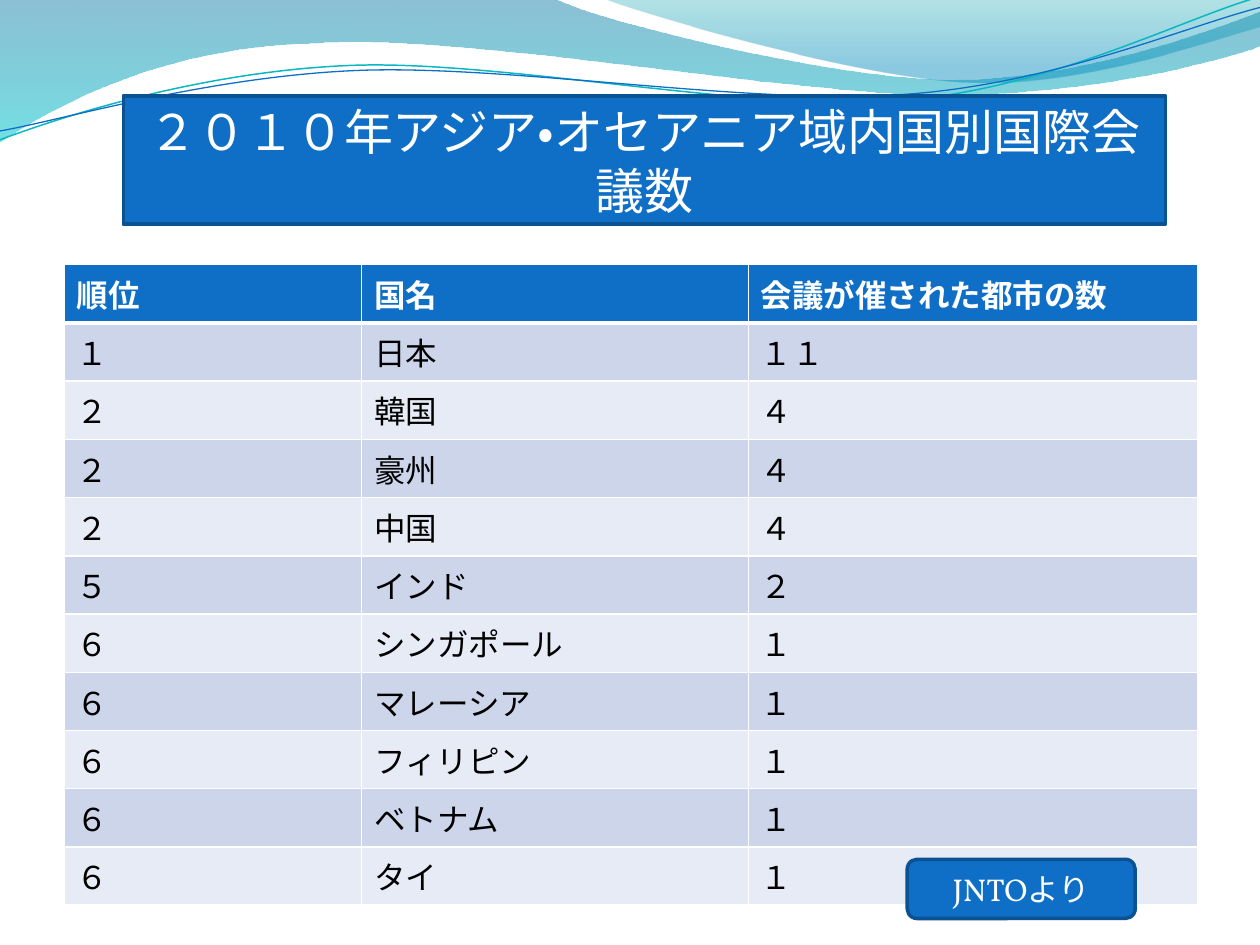
import math

import pptx
import pptx.util
import pptx.dml.color
import pptx.enum.shapes
import pptx.enum.text
import pptx.enum.lang
import pptx.oxml
import pptx.oxml.ns
from lxml import etree

Inches, Pt = pptx.util.Inches, pptx.util.Pt
SHAPE = pptx.enum.shapes.MSO_SHAPE
ALIGN = pptx.enum.text.PP_ALIGN
MIDDLE = pptx.enum.text.MSO_ANCHOR.MIDDLE
FONT = "Vollkorn"
COLORS = {
    "blue": "0F6FC6", "edge": "0B5292", "white": "FFFFFF", "black": "000000",
    "odd": "CCD5EA", "even": "E7EBF5", "teal": "0AB8BF",
    "deep": "0074A1", "aqua": "00C6CF", "sea": "00A1A9", "sky": "008BBF",
}

# Waves: each step has one point (start or line) or three points (curve)
BAND = [[(0, 0)], [(4.4, -0.01)],
        [(4.76, 0.17), (6.64, 0.63), (7.58, 0.63)],
        [(8.53, 0.63), (9.58, 0.26), (10, 0.09)], [(10.01, 0.36)],
        [(9.83, 0.44), (8.7, 0.76), (7.46, 0.75)],
        [(6.22, 0.75), (3.82, 0.28), (2.57, 0.34)],
        [(1.29, 0.36), (0.46, 0.83), (-0.01, 1.13)]]
CREST = [[(4.79, -0.01)], [(5.09, 0.11), (6.82, 0.62), (7.69, 0.65)],
         [(8.56, 0.69), (9.61, 0.32), (10, 0.21)], [(10, 0)]]
UPPER = [[(0, 1.11)], [(0.48, 0.93), (1.58, 0.57), (2.77, 0.52)],
         [(3.95, 0.47), (5.93, 0.89), (7.13, 0.8)],
         [(8.33, 0.71), (9.38, 0.15), (9.98, -0.02)]]
LOWER = [[(0, 1.04)], [(0.47, 0.96), (1.64, 0.61), (2.83, 0.56)],
         [(4.03, 0.51), (5.97, 0.84), (7.17, 0.75)],
         [(8.36, 0.67), (9.41, 0.21), (10, 0.06)]]
TILT = -2.7

HEAD = ["順位", "国名", "会議が催された都市の数"]
ROWS = [("１", "日本", "１１"), ("２", "韓国", "４"), ("２", "豪州", "４"),
        ("２", "中国", "４"), ("５", "インド", "２"), ("６", "シンガポール", "１"),
        ("６", "マレーシア", "１"), ("６", "フィリピン", "１"),
        ("６", "ベトナム", "１"), ("６", "タイ", "１")]


def rgb(name):
    return pptx.dml.color.RGBColor.from_string(COLORS[name])


def write(frame, text, size=18, color="white", bold=False, align=None):
    para = frame.paragraphs[0]
    para.alignment = align
    run = para.add_run()
    run.text = text
    font = run.font
    font.name, font.size, font.bold = FONT, Pt(size), bold
    font.color.rgb = rgb(color)
    font.language_id = pptx.enum.lang.MSO_LANGUAGE_ID.JAPANESE


def level(steps, angle):
    """Turn the steps back by an angle, about the middle of their ends."""
    (x0, y0), (x1, y1) = steps[0][0], steps[-1][-1]
    mid, high = (x0 + x1) / 2, (y0 + y1) / 2
    cos, sin = math.cos(math.radians(-angle)), math.sin(math.radians(-angle))
    return [[(mid + (x - mid) * cos - (y - high) * sin,
              high + (x - mid) * sin + (y - high) * cos) for x, y in step]
            for step in steps]


def wave(slide, box, steps, close, angle=0):
    left, top = box[:2]
    steps = [[(left + Inches(x), top + Inches(y)) for x, y in step]
             for step in level(steps, angle)]
    ends = [step[-1] for step in steps]
    form = slide.shapes.build_freeform(*ends[0])
    form.add_line_segments(ends[1:], close=close)
    shape = form.convert_to_shape()
    shape.shadow.inherit = False
    # Bend the segments that have control points
    qn = pptx.oxml.ns.qn
    lines = list(shape._element.iter(qn("a:lnTo")))
    for line, step in zip(lines, steps[1:]):
        if len(step) == 3:
            curve = etree.Element(qn("a:cubicBezTo"))
            for x, y in step:
                etree.SubElement(curve, qn("a:pt"), x=str(x - shape.left),
                                 y=str(y - shape.top))
            line.getparent().replace(line, curve)
    shape.rotation = angle
    return shape


def fade(shape, stops):
    """Fill from top to bottom with (place, colour, opacity) stops."""
    fill = shape.fill
    fill.gradient()
    fill.gradient_angle = 270
    for stop, (place, color, _) in zip(fill.gradient_stops, stops):
        stop.position = place
        stop.color.rgb = rgb(color)
    tags = shape._element.iter(pptx.oxml.ns.qn("a:srgbClr"))
    for tag, (_, _, alpha) in zip(list(tags), stops):
        etree.SubElement(tag, pptx.oxml.ns.qn("a:alpha"), val=str(alpha * 1000))
    shape.line.fill.background()


def waves(slide, box):
    fade(wave(slide, box, BAND, True), [(0, "deep", 45), (1, "aqua", 55)])
    fade(wave(slide, box, CREST, True), [(0, "sea", 30), (0.8, "sky", 45)])
    for steps, color, width in ((UPPER, "teal", 0.85), (LOWER, "blue", 0.75)):
        curve = wave(slide, box, steps, False, TILT)
        curve.fill.background()
        curve.line.color.rgb = rgb(color)
        curve.line.width = Pt(width)


def border(cell, head):
    props = cell._tc.get_or_add_tcPr()
    for i, side in enumerate("LRTB"):
        width = Pt(3 if head and side == "B" else 1)
        line = pptx.oxml.parse_xml(
            f'<a:ln{side} {pptx.oxml.ns.nsdecls("a")} w="{width}"><a:solidFill>'
            f'<a:srgbClr val="{COLORS["white"]}"/></a:solidFill></a:ln{side}>')
        props.insert(i, line)


def ranking(slide, box):
    data = [HEAD, *ROWS]
    table = slide.shapes.add_table(len(data), len(HEAD), *box).table
    for col, width in zip(table.columns, (2.36, 3.07, 3.57)):
        col.width = Inches(width)
    for r, row in enumerate(data):
        head = r == 0
        for c, text in enumerate(row):
            cell = table.cell(r, c)
            cell.fill.solid()
            cell.fill.fore_color.rgb = rgb("blue" if head else "odd" if r % 2 else "even")
            border(cell, head)
            write(cell.text_frame, text, color="white" if head else "black", bold=head)


def label(slide, box, kind, text, size):
    shape = slide.shapes.add_shape(kind, *box)
    shape.shadow.inherit = False
    shape.fill.solid()
    shape.fill.fore_color.rgb = rgb("blue")
    shape.line.color.rgb = rgb("edge")
    shape.line.width = Pt(2)
    frame = shape.text_frame
    frame.word_wrap = True
    frame.vertical_anchor = MIDDLE
    write(frame, text, size=size, align=ALIGN.CENTER)


def area(*sizes):
    return [Inches(size) for size in sizes]


def main():
    deck = pptx.Presentation()
    deck.slide_width, deck.slide_height = Inches(10), Inches(7.5)
    slide = deck.slides.add_slide(deck.slide_layouts[6])
    # Top decoration
    waves(slide, area(0, 0, 10, 1.13))
    # Country ranking
    ranking(slide, area(0.51, 2.1, 9, 4.46))
    # Title and source
    label(slide, area(0.98, 0.76, 8.27, 1.02), SHAPE.RECTANGLE,
          "２０１０年アジア・オセアニア域内国別国際会議数", 28)
    label(slide, area(7.2, 6.82, 1.81, 0.47), SHAPE.ROUNDED_RECTANGLE, "JNTOより", 18)
    deck.save("out.pptx")


if __name__ == "__main__":
    main()
